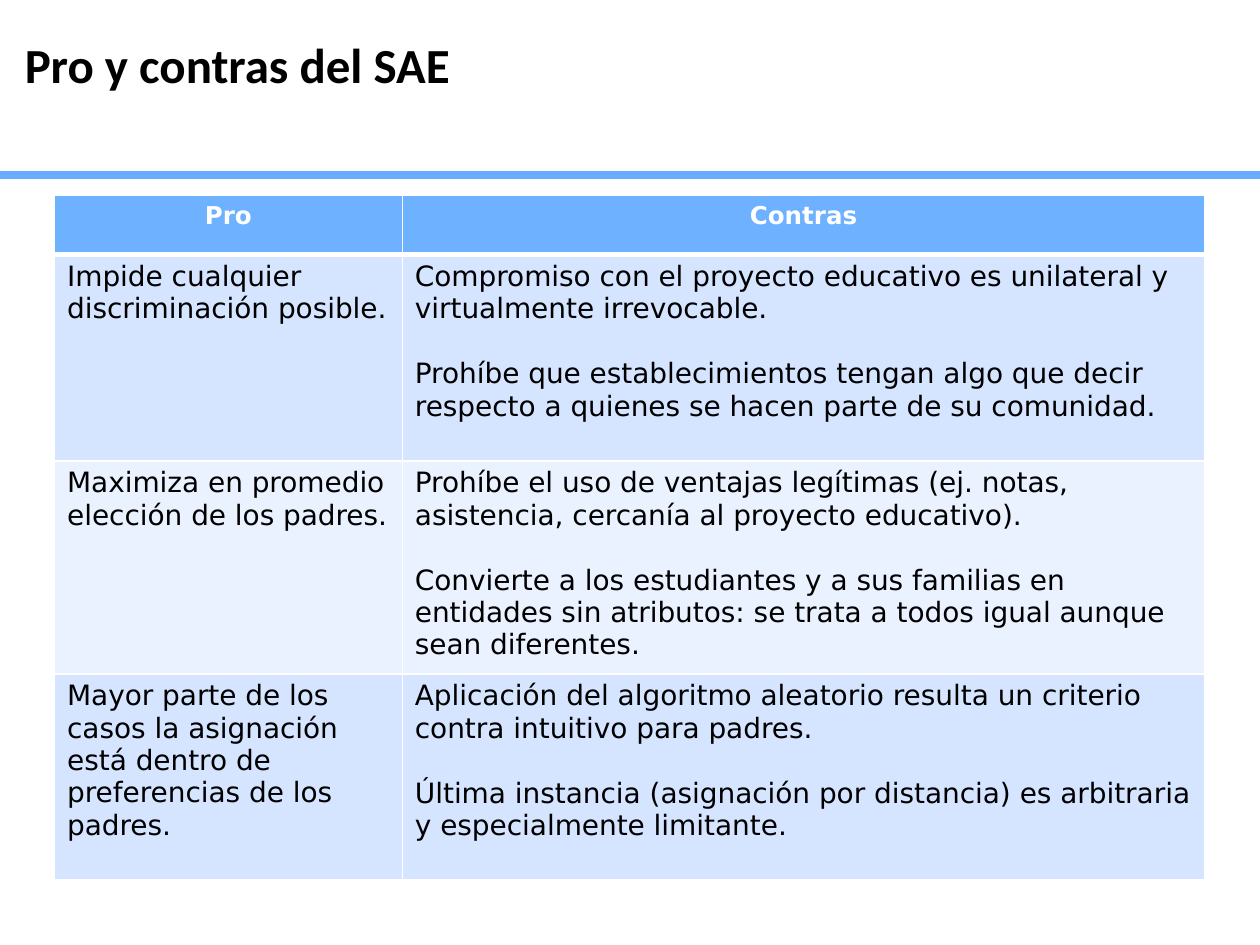
import pptx
import pptx.dml.color
import pptx.enum.shapes
import pptx.enum.text
import pptx.oxml
import pptx.oxml.ns
import pptx.util
from pptx.util import Cm

Pt = pptx.util.Pt
PP_ALIGN = pptx.enum.text.PP_ALIGN
ANCHOR = pptx.enum.text.MSO_ANCHOR


def color(value):
    return pptx.dml.color.RGBColor.from_string(value)


class Deck:
    title_font, body_font = "Calibri", "DejaVu Sans"
    black, white, rule_color = "000000", "FFFFFF", "68ADFD"
    header_fill, band_fills = "6EB1FF", ("D5E4FF", "EBF2FF")
    paragraph_gap = 18.5

    def __init__(self, slide):
        self.s = slide

    def font(self, p, name, size, value, bold=False):
        p.font.name, p.font.size, p.font.bold = name, Pt(size), bold
        p.font.color.rgb = color(value)

    def title(self, text, x, y, w, h):
        tf = self.s.shapes.add_textbox(x, y, w, h).text_frame
        tf.margin_left = tf.margin_right = tf.margin_top = tf.margin_bottom = 0
        tf.word_wrap = True
        tf.vertical_anchor = ANCHOR.MIDDLE
        p = tf.paragraphs[0]
        p.text = text
        self.font(p, self.title_font, 28, self.black, bold=True)

    def rule(self, x, y, w, weight):
        line = self.s.shapes.add_connector(
            pptx.enum.shapes.MSO_CONNECTOR.STRAIGHT, x, y, x + w, y)
        line.line.color.rgb = color(self.rule_color)
        line.line.width = Pt(weight)
        line._element.spPr.append(pptx.oxml.parse_xml(
            f"<a:effectLst {pptx.oxml.ns.nsdecls('a')}/>"))

    def borders(self, cell, **weights):
        tcPr = cell._tc.get_or_add_tcPr()
        for side in "LRTB":
            tcPr.append(pptx.oxml.parse_xml(
                f"<a:ln{side} {pptx.oxml.ns.nsdecls('a')} w='{Pt(weights.get(side, 1))}'>"
                f"<a:solidFill><a:srgbClr val='{self.white}'/></a:solidFill></a:ln{side}>"))

    def cell(self, cell, paragraphs, row):
        header = row == 0
        # Thick border between the header and the body
        self.borders(cell, **({"B": 3} if header else {"T": 3} if row == 1 else {}))
        cell.fill.solid()
        cell.fill.fore_color.rgb = color(
            self.header_fill if header else self.band_fills[(row - 1) % 2])
        tf = cell.text_frame
        for i, text in enumerate(paragraphs):
            p = tf.add_paragraph() if i else tf.paragraphs[0]
            p.text = text
            if i:
                p.space_before = Pt(self.paragraph_gap)
            if header:
                p.alignment = PP_ALIGN.CENTER
                self.font(p, self.body_font, 14, self.white, bold=True)
            else:
                self.font(p, self.body_font, 16, self.black)

    def table(self, rows, x, y, widths, heights):
        table = self.s.shapes.add_table(
            len(rows), len(widths), x, y, sum(widths), sum(heights)).table
        for col, w in zip(table.columns, widths):
            col.width = w
        for r, (row, h) in enumerate(zip(rows, heights)):
            table.rows[r].height = h
            for c, paragraphs in enumerate(row):
                self.cell(table.cell(r, c), paragraphs, r)


ROWS = [
    (["Pro"], ["Contras"]),
    (["Impide cualquier discriminación posible."],
     ["Compromiso con el proyecto educativo es unilateral y virtualmente irrevocable.",
      "Prohíbe que establecimientos tengan algo que decir respecto a quienes se hacen "
      "parte de su comunidad."]),
    (["Maximiza en promedio elección de los padres."],
     ["Prohíbe el uso de ventajas legítimas (ej. notas, asistencia, cercanía al "
      "proyecto educativo).",
      "Convierte a los estudiantes y a sus familias en entidades sin atributos: se "
      "trata a todos igual aunque sean diferentes."]),
    (["Mayor parte de los casos la asignación está dentro de preferencias de los padres."],
     ["Aplicación del algoritmo aleatorio resulta un criterio contra intuitivo para padres.",
      "Última instancia (asignación por distancia) es arbitraria y especialmente "
      "limitante."]),
]


def main():
    prs = pptx.Presentation()
    prs.slide_width, prs.slide_height = Cm(25.4), Cm(19.05)
    deck = Deck(prs.slides.add_slide(prs.slide_layouts[6]))

    # Heading and rule
    deck.rule(Cm(0), Cm(3.53), prs.slide_width, 4.5)
    deck.title("Pro y contras del SAE", Cm(0.5), Cm(0.66), Cm(18.2), Cm(1.27))

    # Pros and cons
    deck.table(ROWS, Cm(1.1), Cm(3.93), [Cm(7.01), Cm(16.18)],
               [Cm(1.2)] + [Cm(4.16)] * 3)

    prs.save("out.pptx")


if __name__ == "__main__":
    main()
